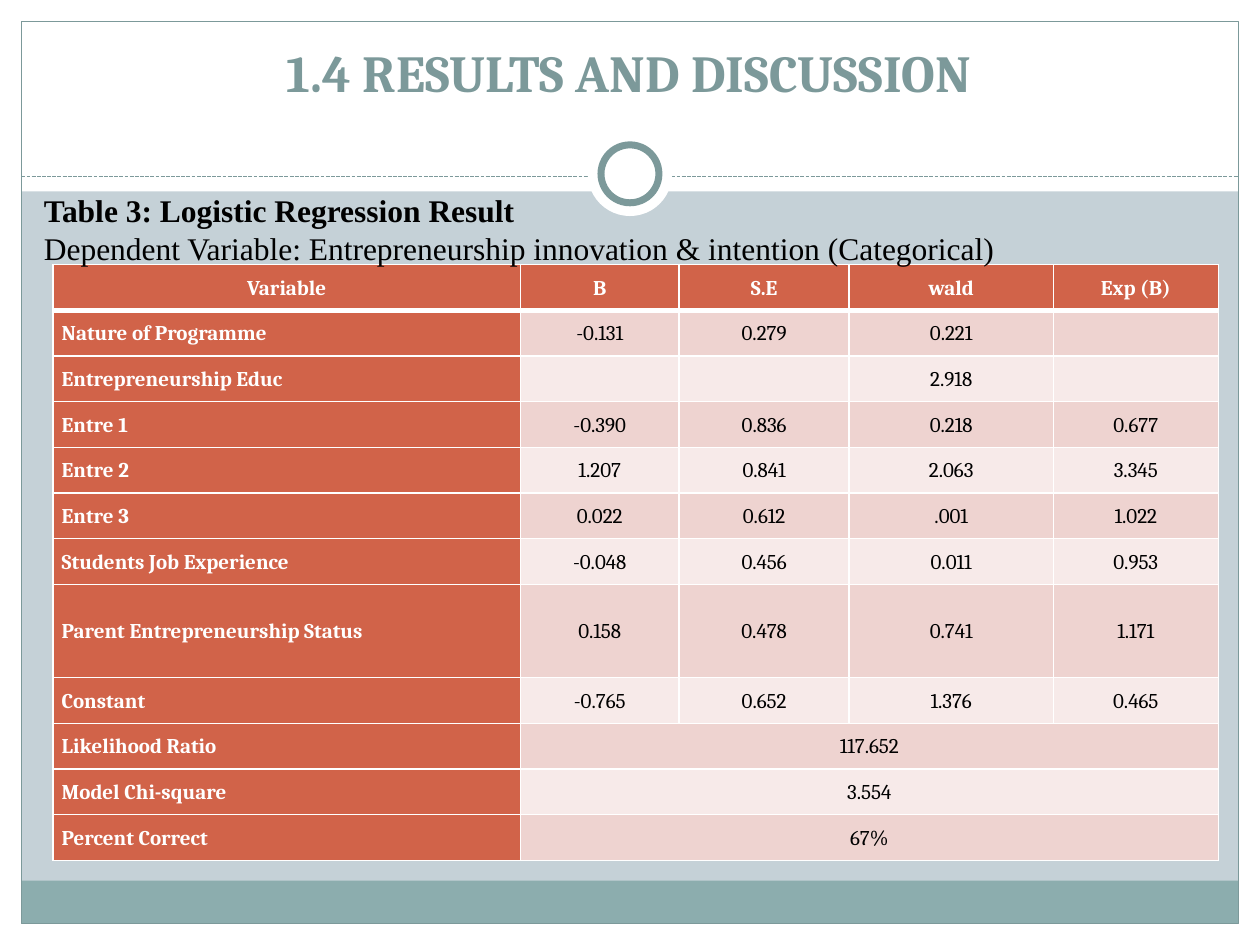
from pptx import Presentation
from pptx.dml.color import RGBColor
from pptx.enum.dml import MSO_LINE
from pptx.enum.shapes import MSO_CONNECTOR, MSO_SHAPE
from pptx.enum.text import MSO_ANCHOR, MSO_AUTO_SIZE, PP_ALIGN
from pptx.oxml import parse_xml
from pptx.oxml.ns import nsdecls
from pptx.util import Inches, Pt

RECTANGLE, OVAL = MSO_SHAPE.RECTANGLE, MSO_SHAPE.OVAL
CENTER, LEFT = PP_ALIGN.CENTER, PP_ALIGN.LEFT
MIDDLE = MSO_ANCHOR.MIDDLE
WIDTH, HEIGHT = 10, 7.5
MARGIN = 0.17
WHITE, BLACK, TEAL, RUST = "FFFFFF", "000000", "7C999A", "D16349"
BAND_FILLS = ("EED3D0", "F7EAE9")
COLUMN_WIDTHS = (3.71, 1.26, 1.35, 1.62, 1.31)
TALL_ROW, TALL_HEIGHT = 7, 0.74
ROWS = (
    ("Variable", "B", "S.E", "wald", "Exp (B)"),
    ("Nature of Programme", "-0.131", "0.279", "0.221", ""),
    ("Entrepreneurship Educ", "", "", "2.918", ""),
    ("Entre 1", "-0.390", "0.836", "0.218", "0.677"),
    ("Entre 2", "1.207", "0.841", "2.063", "3.345"),
    ("Entre 3", "0.022", "0.612", ".001", "1.022"),
    ("Students Job Experience", "-0.048", "0.456", "0.011", "0.953"),
    ("Parent Entrepreneurship Status", "0.158", "0.478", "0.741", "1.171"),
    ("Constant", "-0.765", "0.652", "1.376", "0.465"),
    ("Likelihood Ratio", "117.652"),
    ("Model Chi-square", "3.554"),
    ("Percent Correct", "67%"),
)


def color(value):
    """Turn a hex string into a colour."""
    return RGBColor.from_string(value)


def set_attributes(target, **values):
    """Set each named format value on the target."""
    for name, value in values.items():
        setattr(target, name, value)


def write(paragraph, text, size, font, ink, bold, alignment=LEFT):
    """Write one formatted run into a paragraph."""
    paragraph.alignment = alignment
    run = paragraph.add_run()
    run.text = text
    set_attributes(run.font, size=Pt(size), name=font, bold=bold)
    run.font.color.rgb = color(ink)


def add_panel(slide, kind, box, fill=None, line=None, weight=0.75):
    """Add a flat shape with an optional fill and outline."""
    shape = slide.shapes.add_shape(kind, *map(Inches, box))
    shape.shadow.inherit = False
    if fill:
        shape.fill.solid()
        shape.fill.fore_color.rgb = color(fill)
    else:
        shape.fill.background()
    if line:
        shape.line.color.rgb = color(line)
        shape.line.width = Pt(weight)
    else:
        shape.line.fill.background()


def add_circle(slide, center, diameter, **style):
    """Add a white circle around a centre point."""
    left, top = (value - diameter / 2 for value in center)
    add_panel(slide, OVAL, (left, top, diameter, diameter), WHITE, **style)


def add_frame(slide, box):
    """Draw the margins, header, footer band, border and ring."""
    left, top, width, height = box
    right, bottom = left + width, top + height
    inner = width - 2 * MARGIN
    for margin in (
        (left, bottom - MARGIN, width, MARGIN),
        (left, top, width, 1.52),
        (left, top, MARGIN, height),
        (right - MARGIN, top, MARGIN, height),
    ):
        add_panel(slide, RECTANGLE, margin, WHITE)
    add_panel(slide, RECTANGLE, (left + MARGIN, bottom - 0.51, inner, 0.34), "8CADAE")
    add_panel(slide, RECTANGLE, (left + MARGIN, top + MARGIN, inner, height - 2 * MARGIN), line=TEAL)
    rule_y = top + 1.4
    rule = slide.shapes.add_connector(
        MSO_CONNECTOR.STRAIGHT,
        *map(Inches, (left + MARGIN, rule_y, right - MARGIN, rule_y)),
    )
    rule.line.color.rgb = color(TEAL)
    set_attributes(rule.line, width=Pt(0.75), dash_style=MSO_LINE.SQUARE_DOT)
    rule._element.spPr.append(parse_xml(f"<a:effectLst {nsdecls('a')}/>"))
    center = (left + width / 2, top + 1.38)
    add_circle(slide, center, 0.67)
    add_circle(slide, center, 0.46, line=TEAL, weight=4)


def place_title(slide, box):
    """Move the title placeholder in front of the header and fill it."""
    title = slide.shapes.title
    slide.shapes._spTree.append(title._element)
    set_attributes(title, **dict(zip(("left", "top", "width", "height"), map(Inches, box))))
    set_attributes(
        title.text_frame, vertical_anchor=MIDDLE, auto_size=MSO_AUTO_SIZE.NONE,
        margin_top=0, margin_bottom=Inches(0.44),
    )
    write(title.text_frame.paragraphs[0], "1.4 RESULTS AND DISCUSSION", 29.7, "Cambria", TEAL, True, CENTER)


def format_cell(cell, text, fill, ink, bold, alignment, top_weight, bottom_weight):
    """Give a table cell its borders, fill and text."""
    side = Inches(0.07)
    set_attributes(
        cell, vertical_anchor=MIDDLE, margin_left=side, margin_right=side,
        margin_top=0, margin_bottom=0,
    )
    properties = cell._tc.get_or_add_tcPr()
    for edge, weight in zip("LRTB", (1, 1, top_weight, bottom_weight)):
        properties.append(parse_xml(
            f'<a:ln{edge} {nsdecls("a")} w="{Pt(weight)}"><a:solidFill>'
            f'<a:srgbClr val="{WHITE}"/></a:solidFill></a:ln{edge}>'
        ))
    cell.fill.solid()
    cell.fill.fore_color.rgb = color(fill)
    if text:
        paragraph = cell.text_frame.paragraphs[0]
        write(paragraph, text, 12, "Cambria", ink, bold, alignment)
        paragraph.line_spacing = 1.07


def add_results_table(slide, box):
    """Add the regression table, merging rows that hold one value."""
    table = slide.shapes.add_table(len(ROWS), len(COLUMN_WIDTHS), *map(Inches, box)).table
    for column, width in zip(table.columns, COLUMN_WIDTHS):
        column.width = Inches(width)
    row_height = (box[3] - TALL_HEIGHT) / (len(ROWS) - 1)
    last = len(COLUMN_WIDTHS) - 1
    for row, values in enumerate(ROWS):
        table.rows[row].height = Inches(TALL_HEIGHT if row == TALL_ROW else row_height)
        if len(values) == 2:
            table.cell(row, 1).merge(table.cell(row, last))
        for column in range(last + 1):
            heading = row == 0 or column == 0
            format_cell(
                table.cell(row, column),
                values[column] if column < len(values) else "",
                RUST if heading else BAND_FILLS[(row - 1) % 2],
                WHITE if heading else BLACK,
                heading,
                LEFT if column == 0 and row else CENTER,
                3 if row == 1 else 1,
                3 if row == 0 else 1,
            )


def add_caption(slide, box):
    """Add the two-line table caption."""
    frame = slide.shapes.add_textbox(*map(Inches, box)).text_frame
    set_attributes(frame, word_wrap=True, vertical_anchor=MIDDLE)
    font = "Times New Roman"
    write(frame.paragraphs[0], "Table 3: Logistic Regression Result", 18, font, BLACK, True)
    write(
        frame.add_paragraph(),
        "Dependent Variable: Entrepreneurship innovation & intention (Categorical)",
        18, font, BLACK, False,
    )


def main():
    """Build and save the results slide."""
    presentation = Presentation()
    set_attributes(presentation, slide_width=Inches(WIDTH), slide_height=Inches(HEIGHT))
    slide = presentation.slides.add_slide(presentation.slide_layouts[5])
    slide.background.fill.solid()
    slide.background.fill.fore_color.rgb = color("C5D1D7")
    add_frame(slide, (0, 0, WIDTH, HEIGHT))
    place_title(slide, (0.33, 0.5, 9.33, 0.58))
    add_results_table(slide, (0.42, 2.1, sum(COLUMN_WIDTHS), 4.73))
    add_caption(slide, (0.25, 1.46, 8.39, 0.71))
    presentation.save("out.pptx")


if __name__ == "__main__":
    main()
